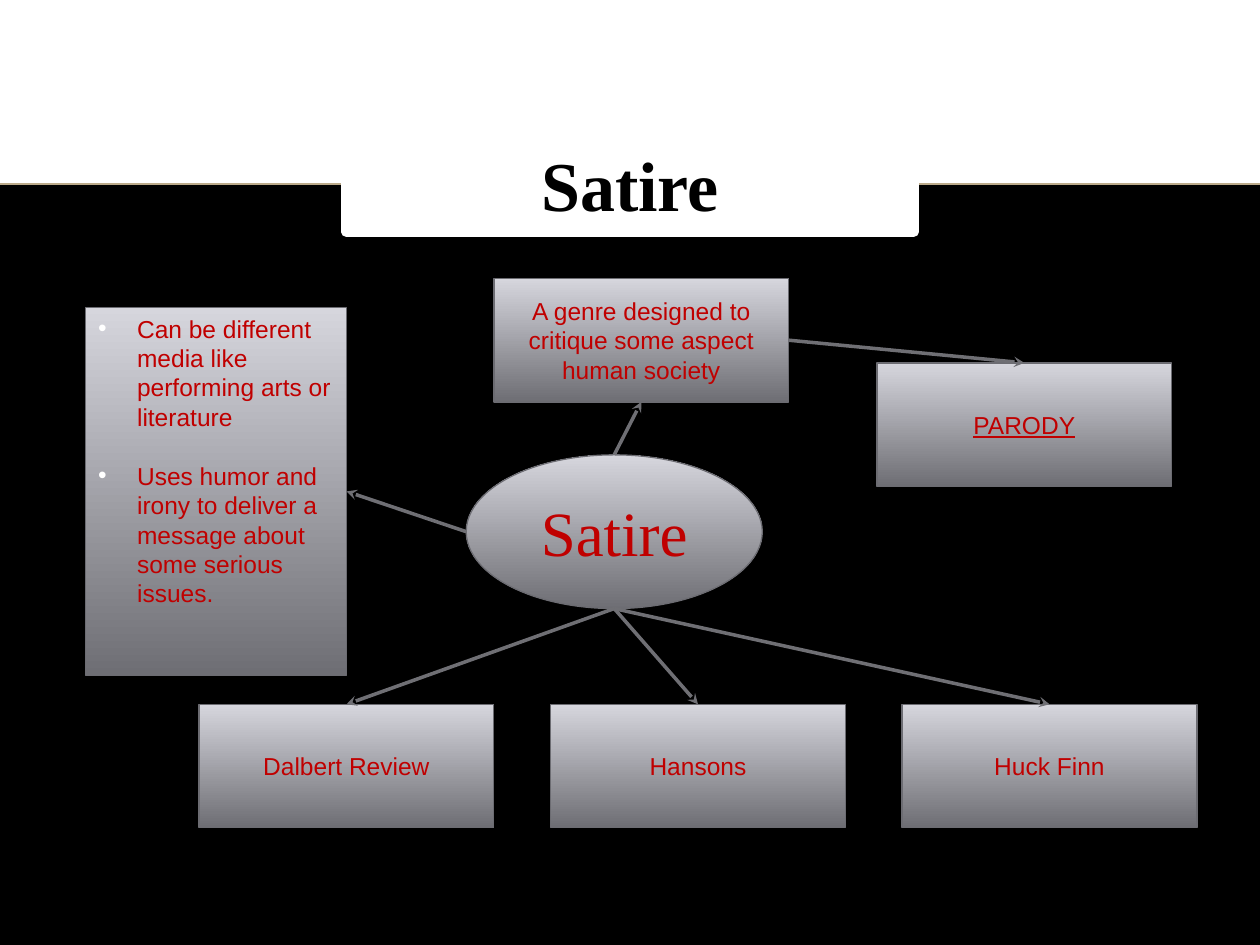
from lxml import etree
from pptx import Presentation
from pptx.dml.color import RGBColor
from pptx.enum.shapes import MSO_CONNECTOR, MSO_SHAPE
from pptx.enum.text import MSO_ANCHOR, PP_ALIGN
from pptx.oxml.ns import qn
from pptx.util import Inches, Pt

RECT, OVAL = MSO_SHAPE.RECTANGLE, MSO_SHAPE.OVAL
LINE = MSO_CONNECTOR.STRAIGHT
CENTER, LEFT = PP_ALIGN.CENTER, PP_ALIGN.LEFT
MIDDLE, TOP = MSO_ANCHOR.MIDDLE, MSO_ANCHOR.TOP

BLACK = RGBColor(0x00, 0x00, 0x00)
WHITE = RGBColor(0xFF, 0xFF, 0xFF)
RED = RGBColor(0xC0, 0x00, 0x00)
TAN = RGBColor(0xBB, 0xAA, 0x8A)
DARK_GRAY = RGBColor(0x6E, 0x6E, 0x74)
LIGHT_GRAY = RGBColor(0xD6, 0xD6, 0xDD)
EDGE_GRAY = RGBColor(0x6C, 0x6C, 0x72)
ARROW_GRAY = RGBColor(0x6F, 0x6F, 0x74)
SERIF, SANS = "Times New Roman", "Arial"

SLIDE_W, SLIDE_H = 10, 7.5
BAND_TOP = 1.46
BOX_W, BOX_H = 2.34, 0.98
EXAMPLE_LEFT, EXAMPLE_TOP, EXAMPLE_STEP = 1.58, 5.59, 2.79

TITLE = "Satire"
TRAITS = [
    "Can be different media like performing arts or literature",
    "Uses humor and irony to deliver a message about some serious issues.",
]
EXAMPLES = ["Dalbert Review", "Hansons", "Huck Finn"]
# name: (text, left, top)
BOXES = {
    "parody": ("PARODY", 6.96, 2.88),
    "genre": ("A genre designed to critique some aspect human society", 3.92, 2.21),
}
for i, example in enumerate(EXAMPLES):
    BOXES[example] = (example, EXAMPLE_LEFT + i * EXAMPLE_STEP, EXAMPLE_TOP)

# (from node, side, to node, side)
ARROWS = [
    ("hub", "top", "genre", "bottom"),
    ("hub", "left", "traits", "right"),
    *[("hub", "bottom", example, "top") for example in EXAMPLES],
    ("genre", "right", "parody", "top"),
]
# side: share of the node's width and height
SIDES = {"top": (0.5, 0), "bottom": (0.5, 1), "left": (0, 0.5), "right": (1, 0.5)}


def add_text(p, text, size, font, color, align=CENTER):
    p.alignment = align
    r = p.add_run()
    r.text = text
    r.font.size, r.font.name = Pt(size), font
    r.font.color.rgb = color
    return r


def add_node(s, kind, left, top, width, height, anchor=MIDDLE):
    """Add a gray shape that is light at the top and dark at the bottom."""
    sp = s.shapes.add_shape(kind, *map(Inches, (left, top, width, height)))
    sp.shadow.inherit = False
    sp.fill.gradient()
    sp.fill.gradient_angle = 90
    for stop, color in zip(sp.fill.gradient_stops, (DARK_GRAY, LIGHT_GRAY)):
        stop.color.rgb = color
    sp.line.color.rgb, sp.line.width = EDGE_GRAY, Pt(0.75)
    sp.text_frame.word_wrap = True
    sp.text_frame.vertical_anchor = anchor
    return sp


def add_bullet(p):
    pPr = p._p.get_or_add_pPr()
    pPr.set("marL", str(Inches(0.31)))
    pPr.set("indent", str(Inches(-0.31)))
    color = etree.SubElement(pPr, qn("a:buClr"))
    etree.SubElement(color, qn("a:srgbClr")).set("val", str(WHITE))
    etree.SubElement(pPr, qn("a:buFont")).set("typeface", SANS)
    etree.SubElement(pPr, qn("a:buChar")).set("char", "•")


def add_line(s, start, end, color, width):
    line = s.shapes.add_connector(LINE, *start, *end)
    line.line.color.rgb, line.line.width = color, Pt(width)
    etree.SubElement(line._element.spPr, qn("a:effectLst"))
    return line


def side_point(sp, side):
    x, y = SIDES[side]
    return int(sp.left + x * sp.width), int(sp.top + y * sp.height)


def add_title(s):
    sp = s.shapes.title
    s.shapes._spTree.append(sp._element)  # in front of the band
    sp.left, sp.top, sp.width, sp.height = map(Inches, (2.75, 1.07, 4.5, 0.77))
    sp.fill.solid()
    sp.fill.fore_color.rgb = WHITE
    sp.line.color.rgb, sp.line.width = WHITE, Pt(6)
    tf = sp.text_frame
    tf.vertical_anchor = MIDDLE
    tf.margin_left = tf.margin_right = tf.margin_top = tf.margin_bottom = Inches(0.1)
    add_text(tf.paragraphs[0], TITLE, 40, SERIF, BLACK).font.bold = True


def main():
    prs = Presentation()
    prs.slide_width, prs.slide_height = Inches(SLIDE_W), Inches(SLIDE_H)
    s = prs.slides.add_slide(prs.slide_layouts[5])

    band = s.shapes.add_shape(RECT, 0, Inches(BAND_TOP), prs.slide_width,
                              Inches(SLIDE_H - BAND_TOP))
    band.shadow.inherit = False
    band.fill.solid()
    band.fill.fore_color.rgb = BLACK
    band.line.fill.background()
    add_line(s, (0, band.top), (prs.slide_width, band.top), TAN, 1)
    add_title(s)

    nodes = {"hub": add_node(s, OVAL, 3.7, 3.61, 2.35, 1.22)}
    add_text(nodes["hub"].text_frame.paragraphs[0], TITLE, 36, SERIF, RED)

    for name, (text, left, top) in BOXES.items():
        nodes[name] = add_node(s, RECT, left, top, BOX_W, BOX_H)
        r = add_text(nodes[name].text_frame.paragraphs[0], text, 14, SANS, RED)
        if name == "parody":
            r.font.underline = True

    nodes["traits"] = add_node(s, RECT, 0.68, 2.44, 2.07, 2.92, TOP)
    tf = nodes["traits"].text_frame
    for i, trait in enumerate(TRAITS):
        p = tf.add_paragraph() if i else tf.paragraphs[0]
        p.space_before = Pt(16.8 if i else 0)
        add_text(p, trait, 14, SANS, RED, LEFT)
        add_bullet(p)

    for start, start_side, end, end_side in ARROWS:
        arrow = add_line(s, side_point(nodes[start], start_side),
                         side_point(nodes[end], end_side), ARROW_GRAY, 2)
        ln = arrow.line._get_or_add_ln()
        etree.SubElement(ln, qn("a:tailEnd")).set("type", "stealth")

    prs.save("out.pptx")


if __name__ == "__main__":
    main()
